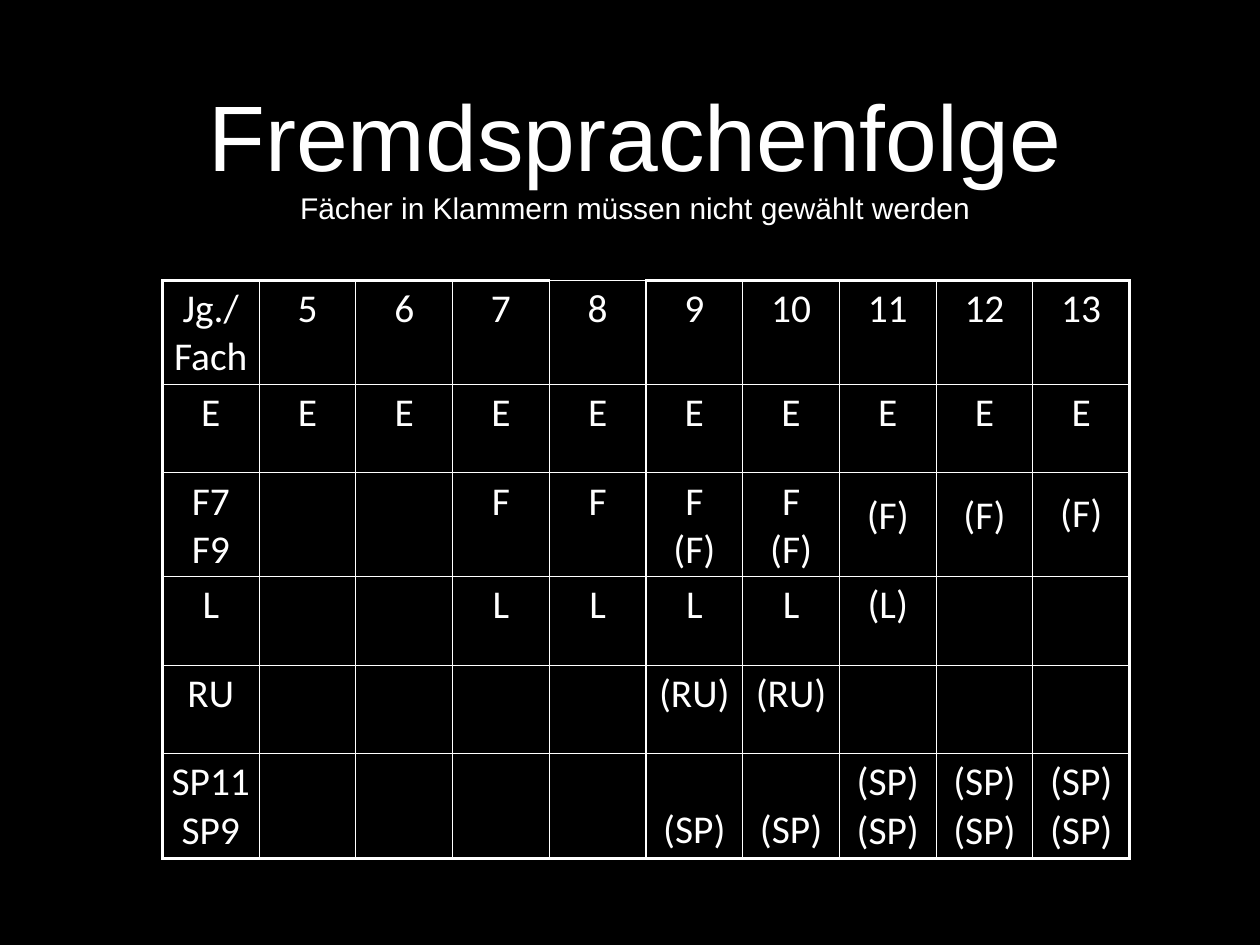
from lxml import etree
from pptx import Presentation
from pptx.dml.color import RGBColor
from pptx.enum.text import MSO_ANCHOR, PP_ALIGN
from pptx.oxml.ns import qn
from pptx.util import Pt

# Content
TITLE = "Fremdsprachenfolge"
SUBTITLE = "Fächer in Klammern müssen nicht gewählt werden"
ROWS = [
    ["Jg./ Fach", "5", "6", "7", "8", "9", "10", "11", "12", "13"],
    ["E"] * 10,
    ["F7\nF9", "", "", "F", "F", "F\n(F)", "F\n(F)", "(F)", "(F)", "(F)"],
    ["L", "", "", "L", "L", "L", "L", "(L)", "", ""],
    ["RU", "", "", "", "", "(RU)", "(RU)", "", "", ""],
    ["SP11\nSP9", "", "", "", "", "(SP)", "(SP)"] + ["(SP)\n(SP)"] * 3,
]

# Layout in px
PX = 9525
SLIDE_SIZE = (1365, 1024)
TITLE_BOX = (72, 74, 1232, 181)
TABLE_LEFT, TABLE_TOP, TABLE_WIDTH = 176, 304, 1048
ROW_HEIGHTS = [112, 96, 112, 96, 96, 112]
TITLE_MARGIN, CELL_MARGIN = 6, 5
# Cells whose text sits lower: (row, column) -> extra px above
LOWERED = {(2, 7): 16, (2, 8): 16, (2, 9): 13, (5, 5): 52, (5, 6): 52}
THIN, THICK = 1, 2.25
THIN_TOP_COLUMN = 4

BLACK = RGBColor(0, 0, 0)
WHITE = RGBColor(255, 255, 255)
CENTER = PP_ALIGN.CENTER
TOP, MIDDLE = MSO_ANCHOR.TOP, MSO_ANCHOR.MIDDLE


def add_span(para, text, size, font):
    span = para.add_run()
    span.text = text
    span.font.size = Pt(size)
    span.font.name = font
    span.font.color.rgb = WHITE


def set_margins(target, margin, extra_top=0):
    target.margin_left = target.margin_right = target.margin_bottom = margin * PX
    target.margin_top = (margin + extra_top) * PX


def set_borders(cell, widths):
    properties = cell._tc.get_or_add_tcPr()
    for side, width in widths.items():
        line = etree.SubElement(properties, qn(f"a:ln{side}"), w=str(Pt(width)))
        fill = etree.SubElement(line, qn("a:solidFill"))
        etree.SubElement(fill, qn("a:srgbClr"), val=str(WHITE))


def add_title(page):
    box = page.shapes.add_textbox(*[value * PX for value in TITLE_BOX])
    frame = box.text_frame
    frame.word_wrap = True
    frame.vertical_anchor = MIDDLE
    set_margins(frame, TITLE_MARGIN)
    para = frame.paragraphs[0]
    para.alignment = CENTER
    add_span(para, TITLE, 75.6, "Arial")
    para.add_line_break()
    add_span(para, SUBTITLE, 24.3, "Arial")


def fill_cell(cell, row, column):
    last_row, last_column = len(ROWS) - 1, len(ROWS[0]) - 1
    thick_top = row == 0 and column != THIN_TOP_COLUMN
    set_borders(cell, {
        "L": THICK if column == 0 else THIN,
        "R": THICK if column == last_column else THIN,
        "T": THICK if thick_top else THIN,
        "B": THICK if row == last_row else THIN,
    })
    cell.fill.background()
    cell.vertical_anchor = TOP
    set_margins(cell, CELL_MARGIN, LOWERED.get((row, column), 0))
    frame = cell.text_frame
    for index, text in enumerate(ROWS[row][column].split("\n")):
        para = frame.add_paragraph() if index else frame.paragraphs[0]
        para.alignment = CENTER
        if text:
            add_span(para, text, 32, "Calibri")


def add_language_table(page):
    column_count = len(ROWS[0])
    frame = page.shapes.add_table(
        len(ROWS), column_count, TABLE_LEFT * PX, TABLE_TOP * PX,
        TABLE_WIDTH * PX, sum(ROW_HEIGHTS) * PX)
    table = frame.table
    table.first_row = table.horz_banding = False
    for column in table.columns:
        column.width = TABLE_WIDTH * PX // column_count
    for row, height in enumerate(ROW_HEIGHTS):
        table.rows[row].height = height * PX
        for column in range(column_count):
            fill_cell(table.cell(row, column), row, column)


def main():
    deck = Presentation()
    deck.slide_width, deck.slide_height = [value * PX for value in SLIDE_SIZE]
    page = deck.slides.add_slide(deck.slide_layouts[6])
    page.background.fill.solid()
    page.background.fill.fore_color.rgb = BLACK
    add_title(page)
    add_language_table(page)
    deck.save("out.pptx")


if __name__ == "__main__":
    main()
